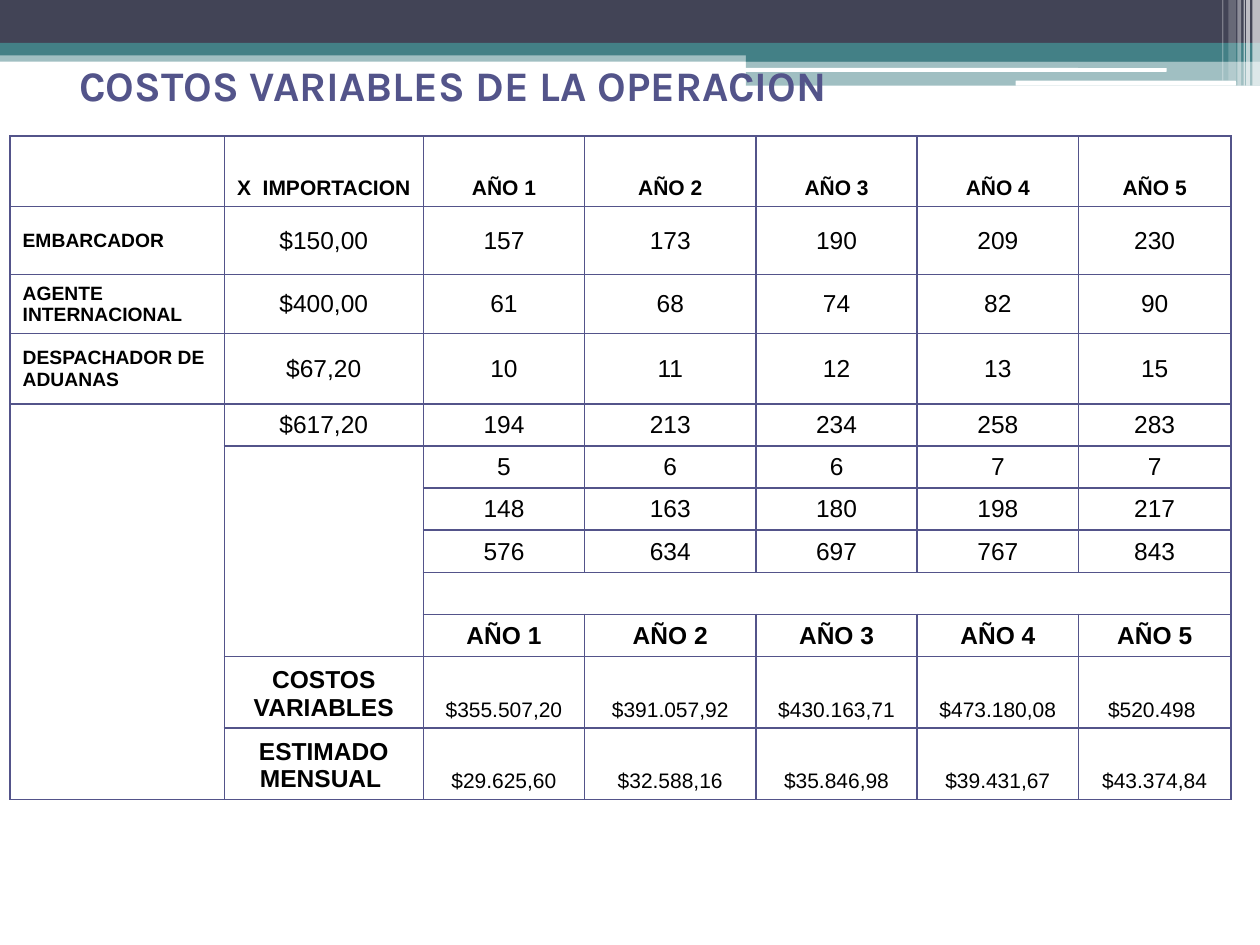
from lxml.etree import SubElement
from pptx import Presentation
from pptx.dml.color import RGBColor
from pptx.enum.shapes import MSO_SHAPE as Shape
from pptx.enum.text import MSO_ANCHOR as Anchor, PP_ALIGN as Align
from pptx.oxml.ns import qn
from pptx.util import Inches, Pt

NAVY = RGBColor(0x42, 0x44, 0x56)
TEAL = RGBColor(0x43, 0x80, 0x86)
WHITE = RGBColor(0xFF, 0xFF, 0xFF)
BLACK = RGBColor(0, 0, 0)
PURPLE = RGBColor(0x53, 0x54, 0x8A)

deck = Presentation()
deck.slide_width, deck.slide_height = Inches(10), Inches(7.5)
page = deck.slides.add_slide(deck.slide_layouts[6])

bands = [
    (Shape.RECTANGLE, 0, 0.4, 10, 0.09, TEAL, 50),
    (Shape.RECTANGLE, 0, 0, 10, 0.34, NAVY, 100),
    (Shape.RECTANGLE, 0, 0.34, 10, 0.1, TEAL, 100),
    (Shape.RECTANGLE, 5.92, 0.39, 4.08, 0.1, TEAL, 100),
    (Shape.RECTANGLE, 5.92, 0.48, 4.08, 0.2, TEAL, 50),
    (Shape.ROUNDED_RECTANGLE, 5.91, 0.54, 3.35, 0.03, WHITE, 100),
    (Shape.ROUNDED_RECTANGLE, 8.06, 0.64, 1.75, 0.04, WHITE, 100),
    (Shape.RECTANGLE, 9.94, 0, 0.06, 0.68, WHITE, 65),
    (Shape.RECTANGLE, 9.89, 0, 0.03, 0.68, WHITE, 65),
    (Shape.RECTANGLE, 9.87, 0, 0.01, 0.68, WHITE, 60),
    (Shape.RECTANGLE, 9.82, 0, 0.03, 0.68, WHITE, 40),
    (Shape.RECTANGLE, 9.75, 0, 0.06, 0.64, WHITE, 20),
    (Shape.RECTANGLE, 9.7, 0, 0.01, 0.64, WHITE, 30),
]
for kind, left, top, width, height, color, opacity in bands:
    band = page.shapes.add_shape(kind, Inches(left), Inches(top), Inches(width), Inches(height))
    band.shadow.inherit = False
    band.line.fill.background()
    band.fill.solid()
    band.fill.fore_color.rgb = color
    if opacity < 100:
        tint = band.fill._xPr.find(qn("a:solidFill"))[0]
        SubElement(tint, qn("a:alpha"), val=str(opacity * 1000))

title = page.shapes.add_textbox(0, 0, Inches(9.25), Inches(0.91))
frame = title.text_frame
frame.word_wrap = True
frame.vertical_anchor = Anchor.MIDDLE
frame.margin_left, frame.margin_top, frame.margin_bottom = Inches(0.63), Inches(0.44), 0
para = frame.paragraphs[0]
para.text = "COSTOS VARIABLES DE LA OPERACION"
para.font.name, para.font.size, para.font.bold = "Karla", Pt(24), True
para.font.color.rgb = PURPLE

years = [f"AÑO {number}" for number in range(1, 6)]
rows = [
    ["", "X  IMPORTACION ", *years],
    ["EMBARCADOR", "$150,00", "157", "173", "190", "209", "230"],
    ["AGENTE INTERNACIONAL", "$400,00", "61", "68", "74", "82", "90"],
    ["DESPACHADOR DE ADUANAS", "$67,20", "10", "11", "12", "13", "15"],
    ["", "$617,20", "194", "213", "234", "258", "283"],
    ["", "", "5", "6", "6", "7", "7"],
    ["", "", "148", "163", "180", "198", "217"],
    ["", "", "576", "634", "697", "767", "843"],
    [""] * 7,
    ["", "", *years],
    ["", "COSTOS VARIABLES", "$355.507,20", "$391.057,92", "$430.163,71", "$473.180,08", "$520.498 "],
    ["", "ESTIMADO MENSUAL ", "$29.625,60", "$32.588,16", "$35.846,98", "$39.431,67", "$43.374,84"],
]
widths = [1.7, 1.58, 1.28, 1.36, 1.28, 1.28, 1.21]
heights = [0.56, 0.54, 0.44, 0.56] + [0.33] * 6 + [0.56] * 2

table = page.shapes.add_table(
    len(rows), len(widths), Inches(0.08), Inches(1.08), Inches(sum(widths)), Inches(sum(heights))
).table
table.first_row = table.horz_banding = False
for column, width in zip(table.columns, widths):
    column.width = Inches(width)
for row, height in zip(table.rows, heights):
    row.height = Inches(height)

for r, texts in enumerate(rows):
    for c, text in enumerate(texts):
        cell = table.cell(r, c)
        cell.text = text
        cell.vertical_anchor = Anchor.BOTTOM if r == 0 or r >= 7 else Anchor.MIDDLE
        para = cell.text_frame.paragraphs[0]
        para.alignment = Align.LEFT if c == 0 else Align.CENTER
        if c == 0:
            size = 11
        elif r == 0 or (r >= 10 and c >= 2):
            size = 12
        else:
            size = 14
        para.font.name, para.font.size = "Arial", Pt(size)
        para.font.bold = c == 0 or r in (0, 9) or (r >= 10 and c == 1)
        para.font.color.rgb = BLACK
        properties = cell._tc.get_or_add_tcPr()
        for side in ("lnL", "lnR", "lnT", "lnB"):
            border = SubElement(properties, qn(f"a:{side}"), w=str(Pt(1)))
            paint = SubElement(border, qn("a:solidFill"))
            SubElement(paint, qn("a:srgbClr"), val=str(PURPLE))
        cell.fill.background()

for first, last in [((4, 0), (11, 0)), ((5, 1), (9, 1)), ((8, 2), (8, 6))]:
    table.cell(*first).merge(table.cell(*last))

deck.save("out.pptx")
